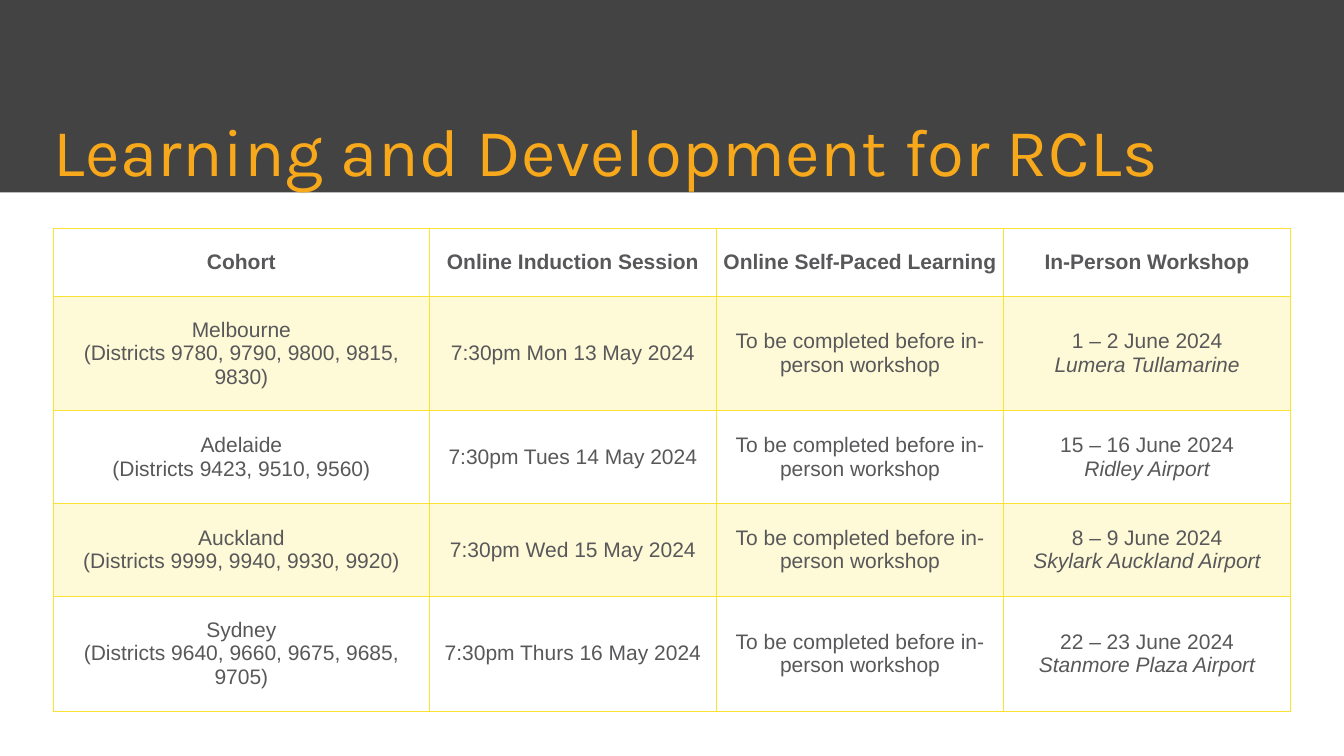
from lxml.etree import SubElement
from pptx import Presentation
from pptx.dml.color import RGBColor
from pptx.enum.shapes import MSO_SHAPE
from pptx.enum.text import MSO_ANCHOR, PP_ALIGN
from pptx.oxml.ns import qn
from pptx.util import Cm, Pt

CHARCOAL = RGBColor(0x43, 0x43, 0x43)
ORANGE = RGBColor(0xF7, 0xA8, 0x1B)
YELLOW = RGBColor(0xFA, 0xE2, 0x32)
GREY = RGBColor(0x58, 0x58, 0x5A)

SELF_PACED = "To be completed before in-person workshop"
HEADINGS = ["Cohort", "Online Induction Session", "Online Self-Paced Learning", "In-Person Workshop"]
COHORTS = [
    ("Melbourne", "9780, 9790, 9800, 9815, 9830", "Mon 13", "1 – 2", "Lumera Tullamarine"),
    ("Adelaide", "9423, 9510, 9560", "Tues 14", "15 – 16", "Ridley Airport"),
    ("Auckland", "9999, 9940, 9930, 9920", "Wed 15", "8 – 9", "Skylark Auckland Airport"),
    ("Sydney", "9640, 9660, 9675, 9685, 9705", "Thurs 16", "22 – 23", "Stanmore Plaza Airport"),
]
COLUMN_WIDTHS = [18.95, 14.47, 14.47, 14.47]
HEADER_HEIGHT, ROW_HEIGHT = 3.4, 4.67


def add_band(page, width):
    band = page.shapes.add_shape(MSO_SHAPE.RECTANGLE, 0, 0, width, Cm(9.7))
    band.shadow.inherit = False
    band.fill.solid()
    band.fill.fore_color.rgb = CHARCOAL
    band.line.fill.background()


def add_title(page, text):
    box = page.shapes.add_textbox(0, Cm(6.35), Cm(61.95), Cm(3.35))
    frame = box.text_frame
    frame.word_wrap = True
    frame.vertical_anchor = MSO_ANCHOR.MIDDLE
    frame.margin_left = frame.margin_right = Cm(0.15)
    frame.margin_top = frame.margin_bottom = Cm(0.15)
    frame.text = text
    para = frame.paragraphs[0]
    para.level = 1
    para.line_spacing = 0.7
    para._p.get_or_add_pPr().set("marL", str(Cm(2.54)))
    font = para.runs[0].font
    font.name, font.size, font.color.rgb = "Karla", Pt(96), ORANGE
    font._element.set("spc", "90")


def add_borders(cell):
    properties = cell._tc.get_or_add_tcPr()
    for side in ("lnL", "lnR", "lnT", "lnB"):
        line = SubElement(properties, qn(f"a:{side}"), w=str(Pt(1)))
        fill = SubElement(line, qn("a:solidFill"))
        SubElement(fill, qn("a:srgbClr"), val=str(YELLOW))


def fill_cell(cell, shaded):
    """Tint the cell with 20% yellow, or leave it clear."""
    if not shaded:
        cell.fill.background()
        return
    cell.fill.solid()
    cell.fill.fore_color.rgb = YELLOW
    colour = cell._tc.tcPr.find(qn("a:solidFill")).find(qn("a:srgbClr"))
    SubElement(colour, qn("a:alpha"), val="20000")


def write_cell(cell, text, bold=False, italic_last=False):
    cell.vertical_anchor = MSO_ANCHOR.MIDDLE
    cell.margin_left = cell.margin_right = Cm(0.25)
    cell.margin_top = cell.margin_bottom = Cm(0.99)
    cell.text_frame.text = text
    paragraphs = cell.text_frame.paragraphs
    for para in paragraphs:
        para.alignment = PP_ALIGN.CENTER
        font = para.runs[0].font
        font.name, font.size, font.color.rgb = "Arial", Pt(30), GREY
        font.bold, font.italic = bold, False
    if italic_last:
        paragraphs[-1].runs[0].font.italic = True


def cohort_texts(city, districts, induction, workshop, venue):
    return [
        f"{city}\n(Districts {districts})",
        f"7:30pm {induction} May 2024",
        SELF_PACED,
        f"{workshop} June 2024\n{venue}",
    ]


def add_schedule(page):
    rows = [HEADINGS] + [cohort_texts(*cohort) for cohort in COHORTS]
    height = HEADER_HEIGHT + ROW_HEIGHT * len(COHORTS)
    table = page.shapes.add_table(len(rows), len(HEADINGS), Cm(2.69), Cm(11.51),
                                  Cm(sum(COLUMN_WIDTHS)), Cm(height)).table
    table.first_row = table.horz_banding = False
    for column, width in zip(table.columns, COLUMN_WIDTHS):
        column.width = Cm(width)
    for r, texts in enumerate(rows):
        header = r == 0
        table.rows[r].height = Cm(HEADER_HEIGHT if header else ROW_HEIGHT)
        for c, text in enumerate(texts):
            cell = table.cell(r, c)
            last_column = c == len(HEADINGS) - 1
            write_cell(cell, text, bold=header, italic_last=last_column and not header)
            add_borders(cell)
            fill_cell(cell, shaded=r % 2 == 1)


def main():
    deck = Presentation()
    deck.slide_width, deck.slide_height = Cm(67.74), Cm(38.1)
    page = deck.slides.add_slide(deck.slide_layouts[6])
    add_band(page, deck.slide_width)
    add_title(page, "Learning and Development for RCLs")
    add_schedule(page)
    deck.save("out.pptx")


if __name__ == "__main__":
    main()
